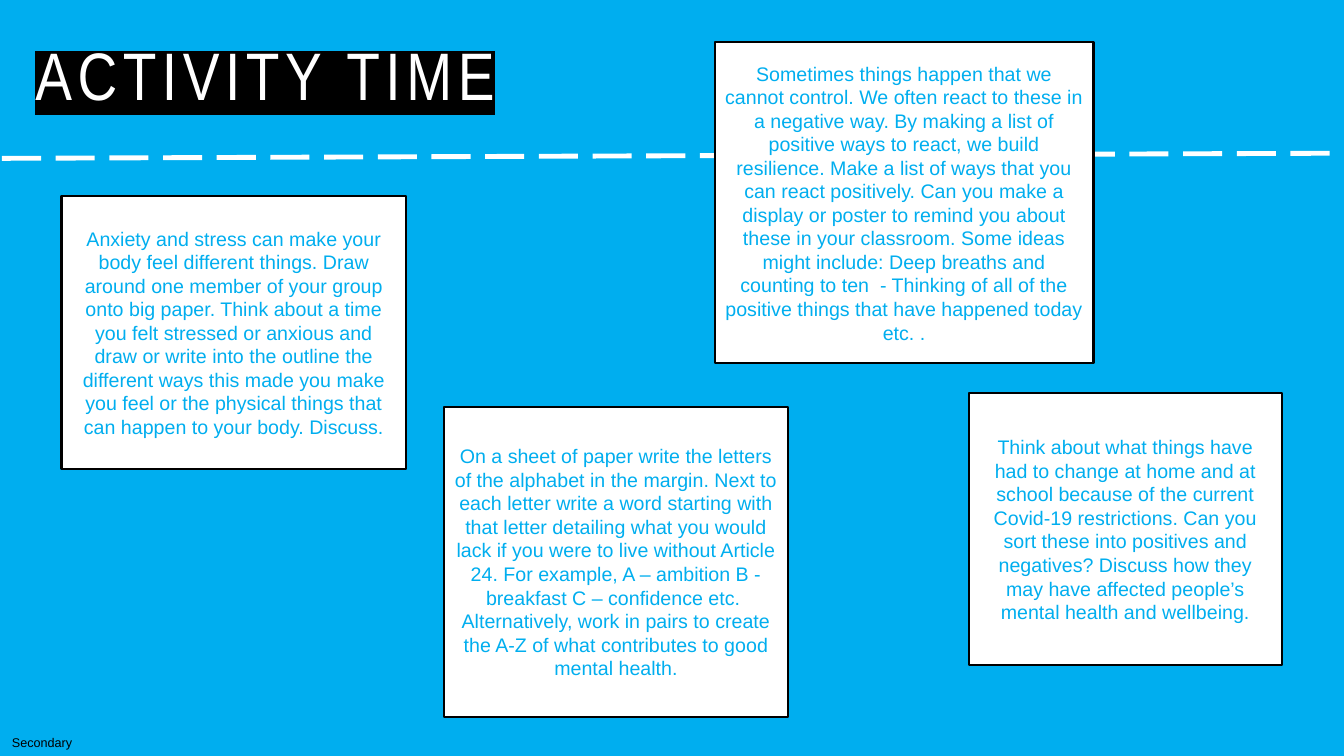
"""Build the "Activity time" slide with four activity cards."""
from lxml import etree
from pptx import Presentation
from pptx.dml.color import RGBColor
from pptx.enum.dml import MSO_LINE
from pptx.enum.shapes import MSO_CONNECTOR, MSO_SHAPE
from pptx.enum.text import MSO_ANCHOR, MSO_AUTO_SIZE, PP_ALIGN
from pptx.oxml.ns import qn
from pptx.util import Cm, Pt

RECT = MSO_SHAPE.RECTANGLE
STRAIGHT = MSO_CONNECTOR.STRAIGHT
LONG_DASH = MSO_LINE.LONG_DASH
TOP, MIDDLE, BOTTOM = MSO_ANCHOR.TOP, MSO_ANCHOR.MIDDLE, MSO_ANCHOR.BOTTOM
LEFT, CENTER = PP_ALIGN.LEFT, PP_ALIGN.CENTER
FIT_SHAPE = MSO_AUTO_SIZE.SHAPE_TO_FIT_TEXT

BLUE, WHITE, BLACK = "00AEEF", "FFFFFF", "000000"


def rgb(value):
    return RGBColor.from_string(value)


def write(sp, text, size, color, font="Arial", align=LEFT, anchor=TOP, wrap=True):
    tf = sp.text_frame
    tf.word_wrap = wrap
    tf.vertical_anchor = anchor
    p = tf.paragraphs[0]
    p.alignment = align
    r = p.add_run()
    r.text = text
    r.font.size = Pt(size)
    r.font.name = font
    r.font.color.rgb = rgb(color)
    return p


prs = Presentation()
prs.slide_width, prs.slide_height = Cm(33.87), Cm(19.05)
s = prs.slides.add_slide(prs.slide_layouts[6])
s.background.fill.solid()
s.background.fill.fore_color.rgb = rgb(BLUE)

divider = s.shapes.add_connector(STRAIGHT, Cm(0.05), Cm(3.99), Cm(33.86), Cm(3.86))
divider.line.color.rgb = rgb(WHITE)
divider.line.width = Pt(3.5)
divider.line.dash_style = LONG_DASH
etree.SubElement(divider._element.spPr, qn("a:effectLst"))

title = s.shapes.add_textbox(Cm(0.64), Cm(0.58), Cm(15.62), Cm(2.44))
p = write(title, "ACTIVITY TIME", 48, WHITE, font="Arial Narrow", anchor=BOTTOM)
p.line_spacing = 0.9
rPr = p.runs[0].font._element
rPr.set("spc", "400")
highlight = etree.Element(qn("a:highlight"))
etree.SubElement(highlight, qn("a:srgbClr"), val=BLACK)
rPr.find(qn("a:solidFill")).addnext(highlight)

level = s.shapes.add_textbox(Cm(0.05), Cm(18.39), Cm(2.06), Cm(0.64))
write(level, "Secondary", 9, BLACK, wrap=False)
level.text_frame.auto_size = FIT_SHAPE

cards = [
    (18.01, 1.07, 9.55, 8.08,
     "Sometimes things happen that we cannot control. We often react to these in a "
     "negative way. By making a list of positive ways to react, we build resilience. "
     "Make a list of ways that you can react positively. Can you make a display or "
     "poster to remind you about these in your classroom. Some ideas might include: "
     "Deep breaths and counting to ten  - Thinking of all of the positive things that "
     "have happened today etc. ."),
    (1.55, 4.95, 8.69, 6.86,
     "Anxiety and stress can make your body feel different things. Draw around one "
     "member of your group onto big paper. Think about a time you felt stressed or "
     "anxious and draw or write into the outline the different ways this made you make "
     "you feel or the physical things that can happen to your body. Discuss."),
    (24.41, 9.91, 7.9, 6.86,
     "Think about what things have had to change at home and at school because of the "
     "current Covid-19 restrictions. Can you sort these into positives and negatives? "
     "Discuss how they may have affected people’s mental health and wellbeing."),
    (11.18, 10.26, 8.69, 7.8,
     "On a sheet of paper write the letters of the alphabet in the margin. Next to each "
     "letter write a word starting with that letter detailing what you would lack if "
     "you were to live without Article 24. For example, A – ambition B - breakfast "
     "C – confidence etc.  Alternatively, work in pairs to create the A-Z of what "
     "contributes to good mental health."),
]
for x, y, w, h, text in cards:
    sp = s.shapes.add_shape(RECT, Cm(x), Cm(y), Cm(w), Cm(h))
    sp.shadow.inherit = False
    sp.fill.solid()
    sp.fill.fore_color.rgb = rgb(WHITE)
    sp.line.color.rgb = rgb(BLACK)
    sp.line.width = Pt(1.5)
    write(sp, text, 14, BLUE, align=CENTER, anchor=MIDDLE)

prs.save("out.pptx")
